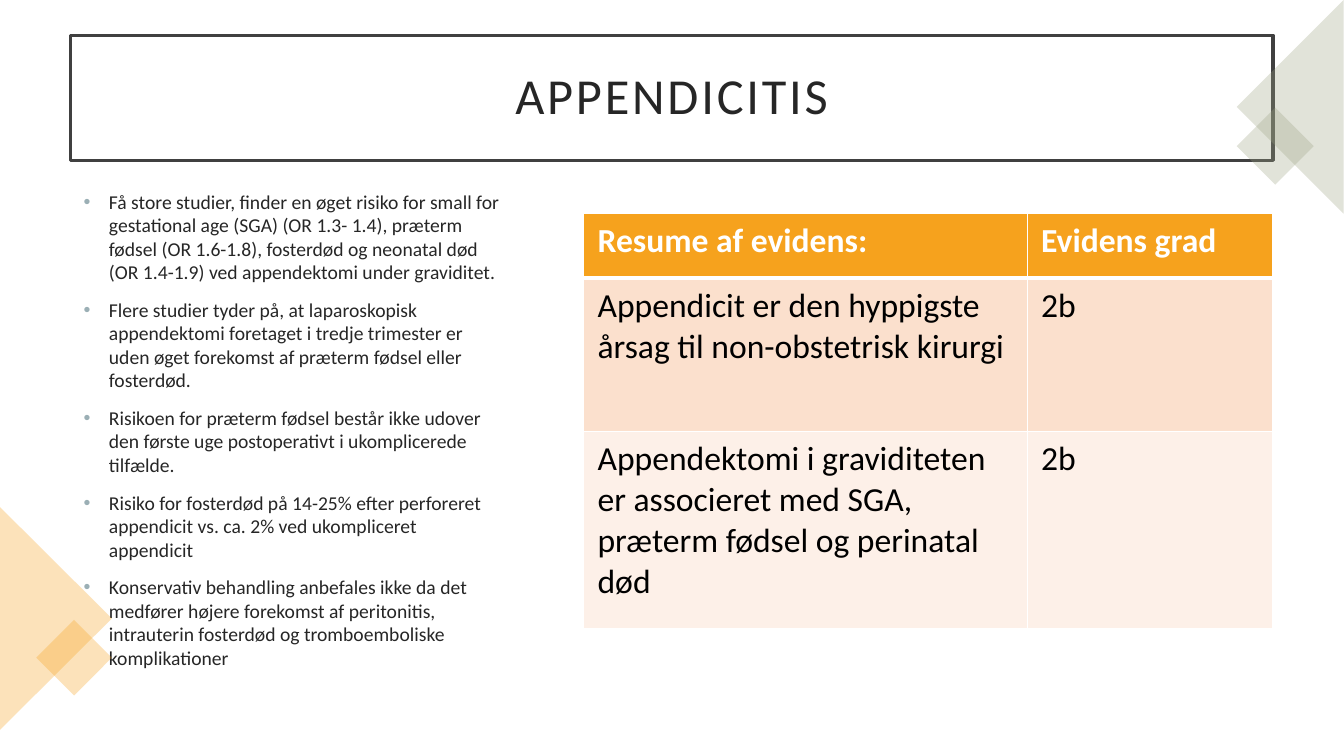
from lxml.etree import SubElement
from pptx import Presentation
from pptx.dml.color import RGBColor
from pptx.enum.shapes import MSO_SHAPE as Preset
from pptx.enum.text import MSO_ANCHOR as Anchor, MSO_AUTO_SIZE as AutoSize, PP_ALIGN as Align
from pptx.oxml import parse_xml
from pptx.oxml.ns import nsdecls, qn
from pptx.util import Pt

FONT = "Calibri"
WHITE = RGBColor(0xFF, 0xFF, 0xFF)
BLACK = RGBColor(0, 0, 0)
INK = RGBColor(0x26, 0x26, 0x26)
FRAME = RGBColor(0x40, 0x40, 0x40)
BULLET = RGBColor(0x9B, 0xAF, 0xB5)
ORANGE = RGBColor(0xF6, 0xA2, 0x1D)
SAGE = RGBColor(0x9C, 0xA3, 0x83)
ROW_FILLS = [ORANGE, RGBColor(0xFB, 0xE0, 0xCD), RGBColor(0xFD, 0xF0, 0xE8)]

FINDINGS = [
    "Få store studier, finder en øget risiko for small for gestational age (SGA) "
    "(OR 1.3- 1.4), præterm fødsel (OR 1.6-1.8), fosterdød og neonatal død "
    "(OR 1.4-1.9) ved appendektomi under graviditet.",
    "Flere studier tyder på, at laparoskopisk appendektomi foretaget i tredje "
    "trimester er uden øget forekomst af præterm fødsel eller fosterdød.",
    "Risikoen for præterm fødsel består ikke udover den første uge postoperativt "
    "i ukomplicerede tilfælde.",
    "Risiko for fosterdød på 14-25% efter perforeret appendicit vs. ca. 2% ved "
    "ukompliceret appendicit",
    "Konservativ behandling anbefales ikke da det medfører højere forekomst af "
    "peritonitis, intrauterin fosterdød og tromboemboliske komplikationer",
]
EVIDENCE = [
    ("Resume af evidens:", "Evidens grad"),
    ("Appendicit er den hyppigste årsag til non-obstetrisk kirurgi", "2b"),
    ("Appendektomi i graviditeten er associeret med SGA, præterm fødsel og "
     "perinatal død", "2b"),
]
COLUMN_WIDTHS = [316.8, 175]
ROW_HEIGHTS = [46.1, 109.4, 141.1]


def place(shape, left, top, width, height):
    shape.left, shape.top = Pt(left), Pt(top)
    shape.width, shape.height = Pt(width), Pt(height)


def style_font(font, size, color, bold=False):
    font.name, font.size, font.bold = FONT, Pt(size), bold
    font.color.rgb = color


def fill_title(title, text):
    place(title, 50.4, 25.2, 859, 89.3)
    title.fill.solid()
    title.fill.fore_color.rgb = WHITE
    title.line.color.rgb = FRAME
    title.line.width = Pt(2.5)
    frame = title.text_frame
    frame.text = text
    frame.auto_size = AutoSize.NONE
    frame.vertical_anchor = Anchor.MIDDLE
    frame.margin_left = frame.margin_right = Pt(14.4)
    frame.margin_top = frame.margin_bottom = Pt(14.4)
    heading = frame.paragraphs[0]
    heading.alignment = Align.CENTER
    heading.line_spacing = 0.9
    run = heading.runs[0]
    style_font(run.font, 36, INK)
    run._r.get_or_add_rPr().set("spc", "200")


def add_bullet(paragraph):
    props = paragraph._p.get_or_add_pPr()
    props.set("marL", str(Pt(18)))
    props.set("indent", str(Pt(-18)))
    color = SubElement(props, qn("a:buClr"))
    SubElement(color, qn("a:srgbClr"), val=str(BULLET))
    SubElement(props, qn("a:buFont"), typeface="Arial")
    SubElement(props, qn("a:buChar"), char="•")


def fill_bullets(body, texts):
    place(body, 52.6, 131.8, 315.4, 378.7)
    frame = body.text_frame
    frame.text = "\n".join(texts)
    frame.auto_size = AutoSize.NONE
    for index, paragraph in enumerate(frame.paragraphs):
        add_bullet(paragraph)
        paragraph.space_before = Pt(10 if index else 0)
        paragraph.line_spacing = 1.0
        style_font(paragraph.runs[0].font, 14, INK)


def add_corner(slide, color, parts):
    """Group translucent shapes given as (preset, rotation, box)."""
    corner = slide.shapes.add_group_shape()
    for preset, rotation, box in parts:
        part = corner.shapes.add_shape(preset, *map(Pt, box))
        part.rotation = rotation
        part.shadow.inherit = False
        part.line.fill.background()
        part.fill.solid()
        part.fill.fore_color.rgb = color
        tint = part._element.spPr.find(qn("a:solidFill"))[0]
        SubElement(tint, qn("a:alpha"), val="30000")


def set_borders(cell, top, bottom):
    props = cell._tc.get_or_add_tcPr()
    widths = {"lnL": 1, "lnR": 1, "lnT": top, "lnB": bottom}
    for index, (side, width) in enumerate(widths.items()):
        props.insert(index, parse_xml(
            f'<a:{side} {nsdecls("a")} w="{Pt(width)}"><a:solidFill>'
            f'<a:srgbClr val="{WHITE}"/></a:solidFill></a:{side}>'))


def fill_cell(cell, text, row):
    cell.text = text
    cell.margin_left = cell.margin_right = Pt(10)
    cell.margin_top = cell.margin_bottom = Pt(5)
    cell.fill.solid()
    cell.fill.fore_color.rgb = ROW_FILLS[row]
    header = row == 0
    style_font(cell.text_frame.paragraphs[0].runs[0].font, 24,
               WHITE if header else BLACK, header)
    set_borders(cell, top=3 if row == 1 else 1, bottom=3 if header else 1)


def add_evidence_table(slide):
    box = (416.9, 152.6, sum(COLUMN_WIDTHS), sum(ROW_HEIGHTS))
    table = slide.shapes.add_table(
        len(EVIDENCE), len(COLUMN_WIDTHS), *map(Pt, box)).table
    for column, width in zip(table.columns, COLUMN_WIDTHS):
        column.width = Pt(width)
    for row, height in enumerate(ROW_HEIGHTS):
        table.rows[row].height = Pt(height)
        for column, text in enumerate(EVIDENCE[row]):
            fill_cell(table.cell(row, column), text, row)


def main():
    deck = Presentation()
    deck.slide_width, deck.slide_height = Pt(960), Pt(540)
    slide = deck.slides.add_slide(deck.slide_layouts[1])
    slide.background.fill.solid()
    slide.background.fill.fore_color.rgb = WHITE

    # Title and findings
    fill_title(slide.shapes.title, "APPENDICITIS")
    fill_bullets(slide.placeholders[1], FINDINGS)

    # Corner decorations
    add_corner(slide, ORANGE, [
        (Preset.ISOSCELES_TRIANGLE, 90, (-39.6, 401.8, 159.1, 79.9)),
        (Preset.RECTANGLE, 45, (33.8, 450.7, 38.2, 38.2)),
    ])
    add_corner(slide, SAGE, [
        (Preset.RECTANGLE, 45, (891.4, 85, 38.9, 38.9)),
        (Preset.ISOSCELES_TRIANGLE, 270, (845.3, 38.2, 152.6, 76.3)),
    ])

    # Evidence grades
    add_evidence_table(slide)
    deck.save("out.pptx")


if __name__ == "__main__":
    main()
